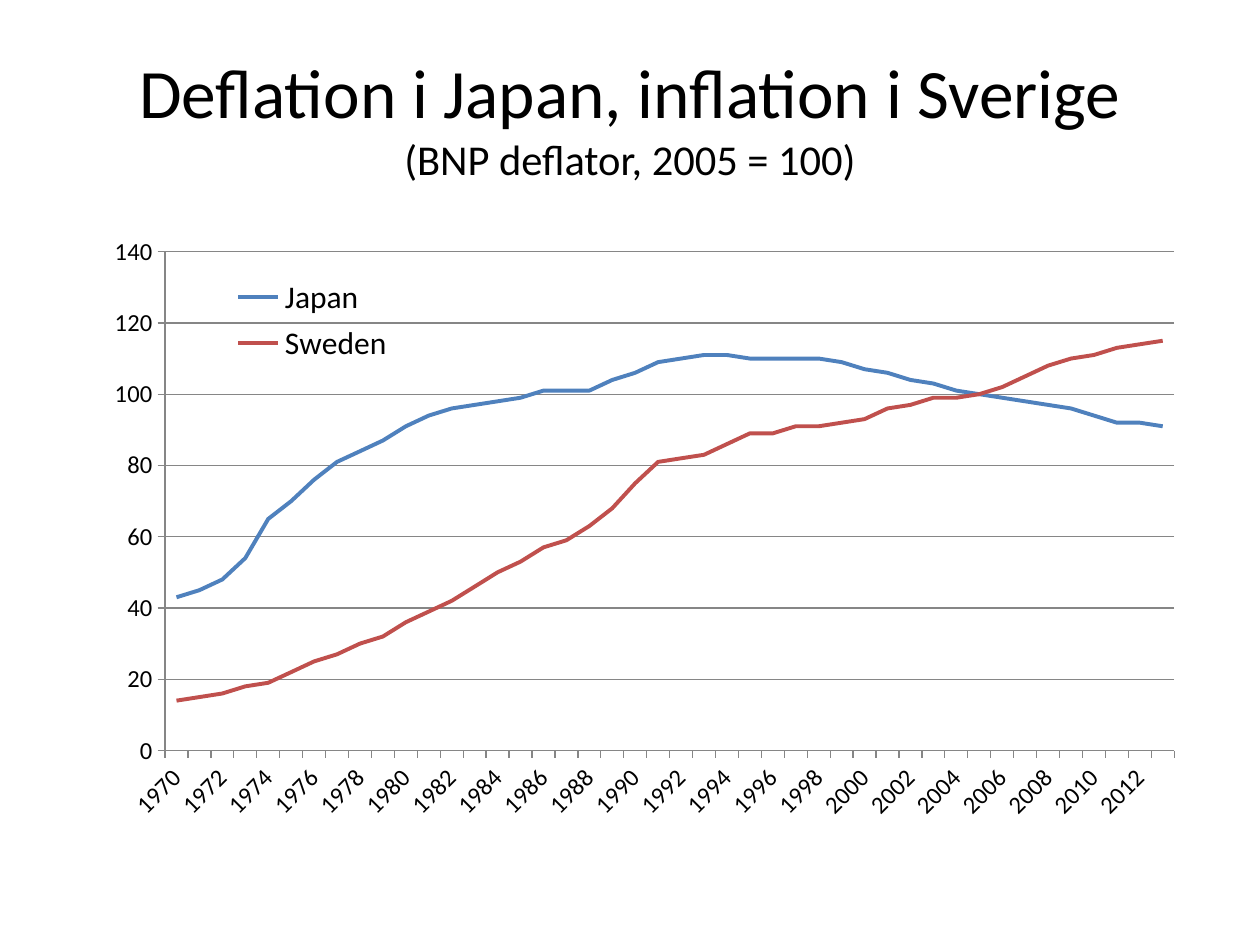
from dataclasses import dataclass

from lxml import etree
from pptx import Presentation
from pptx import util as u
from pptx.chart.data import CategoryChartData
from pptx.dml.color import RGBColor
from pptx.enum import chart as ch, text
from pptx.oxml.ns import qn


@dataclass(frozen=True)
class Theme:
    font: str = "Calibri"
    ink: str = "000000"
    rule: str = "868686"
    lines: tuple = ("4F81BD", "C0504D")
    title: float = 39.6
    subtitle: float = 24.3
    axis: float = 14
    legend: float = 18


def assign(obj, values):
    for name, value in values.items():
        setattr(obj, name, value)


class Deck:
    def __init__(self, theme, width=10, height=7.5):
        self.theme = theme
        self.prs = Presentation()
        self.prs.slide_width = u.Inches(width)
        self.prs.slide_height = u.Inches(height)
        self.s = self.prs.slides.add_slide(self.prs.slide_layouts[6])

    def box(self, x, y, w, h):
        W, H = self.prs.slide_width, self.prs.slide_height
        return int(x * W), int(y * H), int(w * W), int(h * H)

    def style(self, font, size):
        assign(font, dict(name=self.theme.font, size=u.Pt(size), bold=False))
        font.color.rgb = RGBColor.from_string(self.theme.ink)

    def stroke(self, line, color, width):
        line.color.rgb = RGBColor.from_string(color)
        line.width = u.Pt(width)

    def title(self, area, heading, subheading):
        tf = self.s.shapes.add_textbox(*self.box(*area)).text_frame
        assign(tf, dict(word_wrap=True, vertical_anchor=text.MSO_ANCHOR.MIDDLE))
        p = tf.paragraphs[0]
        p.alignment = text.PP_ALIGN.CENTER
        r = p.add_run()
        r.text = heading
        self.style(r.font, self.theme.title)
        p.add_line_break()
        r = p.add_run()
        r.text = subheading
        self.style(r.font, self.theme.subtitle)

    def place(self, parent, index, x, y, w, h, inner=False):
        for old in parent.findall(qn("c:layout")):
            parent.remove(old)
        layout = etree.Element(qn("c:layout"))
        manual = etree.SubElement(layout, qn("c:manualLayout"))
        values = dict(layoutTarget="inner") if inner else {}
        values.update(xMode="edge", yMode="edge", x=x, y=y, w=w, h=h)
        for tag, value in values.items():
            etree.SubElement(manual, qn(f"c:{tag}")).set("val", str(value))
        parent.insert(index, layout)

    def axis(self, axis, **values):
        assign(axis, dict(major_tick_mark=ch.XL_TICK_MARK.OUTSIDE,
                          minor_tick_mark=ch.XL_TICK_MARK.NONE, **values))
        self.style(axis.tick_labels.font, self.theme.axis)
        self.stroke(axis.format.line, self.theme.rule, 0.75)

    def line_chart(self, area, plot, legend, cats, series):
        data = CategoryChartData()
        data.categories = cats
        for name, vals in series.items():
            data.add_series(name, vals)
        chart = self.s.shapes.add_chart(
            ch.XL_CHART_TYPE.LINE, *self.box(*area), data).chart
        assign(chart, dict(has_title=False, has_legend=True))
        self.style(chart.font, self.theme.axis)
        chart.plots[0].vary_by_categories = False
        for ser, color in zip(chart.plots[0].series, self.theme.lines):
            ser.smooth = False
            ser.marker.style = ch.XL_MARKER_STYLE.NONE
            self.stroke(ser.format.line, color, 2.25)

        cat, val = chart.category_axis, chart.value_axis
        self.axis(cat, has_major_gridlines=False)
        self.axis(val, has_major_gridlines=True,
                  minimum_scale=0, maximum_scale=140, major_unit=20)
        self.stroke(val.major_gridlines.format.line, self.theme.rule, 0.75)
        ax = cat._element
        ax.find(qn("c:txPr")).find(qn("a:bodyPr")).set("rot", "-2700000")
        skip = etree.Element(qn("c:tickLblSkip"), val="2")
        ax.find(qn("c:noMultiLvlLbl")).addprevious(skip)

        assign(chart.legend, dict(position=ch.XL_LEGEND_POSITION.RIGHT,
                                  include_in_layout=False))
        self.style(chart.legend.font, self.theme.legend)
        self.place(chart.legend._element, 1, *legend)
        plot_area = chart._chartSpace.find(qn("c:chart")).find(qn("c:plotArea"))
        self.place(plot_area, 0, *plot, inner=True)


def main():
    japan = [43, 45, 48, 54, 65, 70, 76, 81, 84, 87, 91, 94, 96, 97, 98,
             99, 101, 101, 101, 104, 106, 109, 110, 111, 111, 110, 110, 110,
             110, 109, 107, 106, 104, 103, 101, 100, 99, 98, 97, 96, 94, 92,
             92, 91]
    sweden = [14, 15, 16, 18, 19, 22, 25, 27, 30, 32, 36, 39, 42, 46, 50,
              53, 57, 59, 63, 68, 75, 81, 82, 83, 86, 89, 89, 91, 91, 92,
              93, 96, 97, 99, 99, 100, 102, 105, 108, 110, 111, 113, 114, 115]
    deck = Deck(Theme())
    deck.title((0.05, 0.04, 0.9, 1 / 6),
               "Deflation i Japan, inflation i Sverige",
               "(BNP deflator, 2005 = 100)")
    deck.line_chart(area=(0.05, 0.7 / 3, 0.9, 0.66),
                    plot=(0.09, 0.05, 0.89, 0.8),
                    legend=(0.14, 0.08, 0.16, 0.16),
                    cats=[str(year) for year in range(1970, 2014)],
                    series={"Japan": japan, "Sweden": sweden})
    deck.prs.save("out.pptx")


if __name__ == "__main__":
    main()
